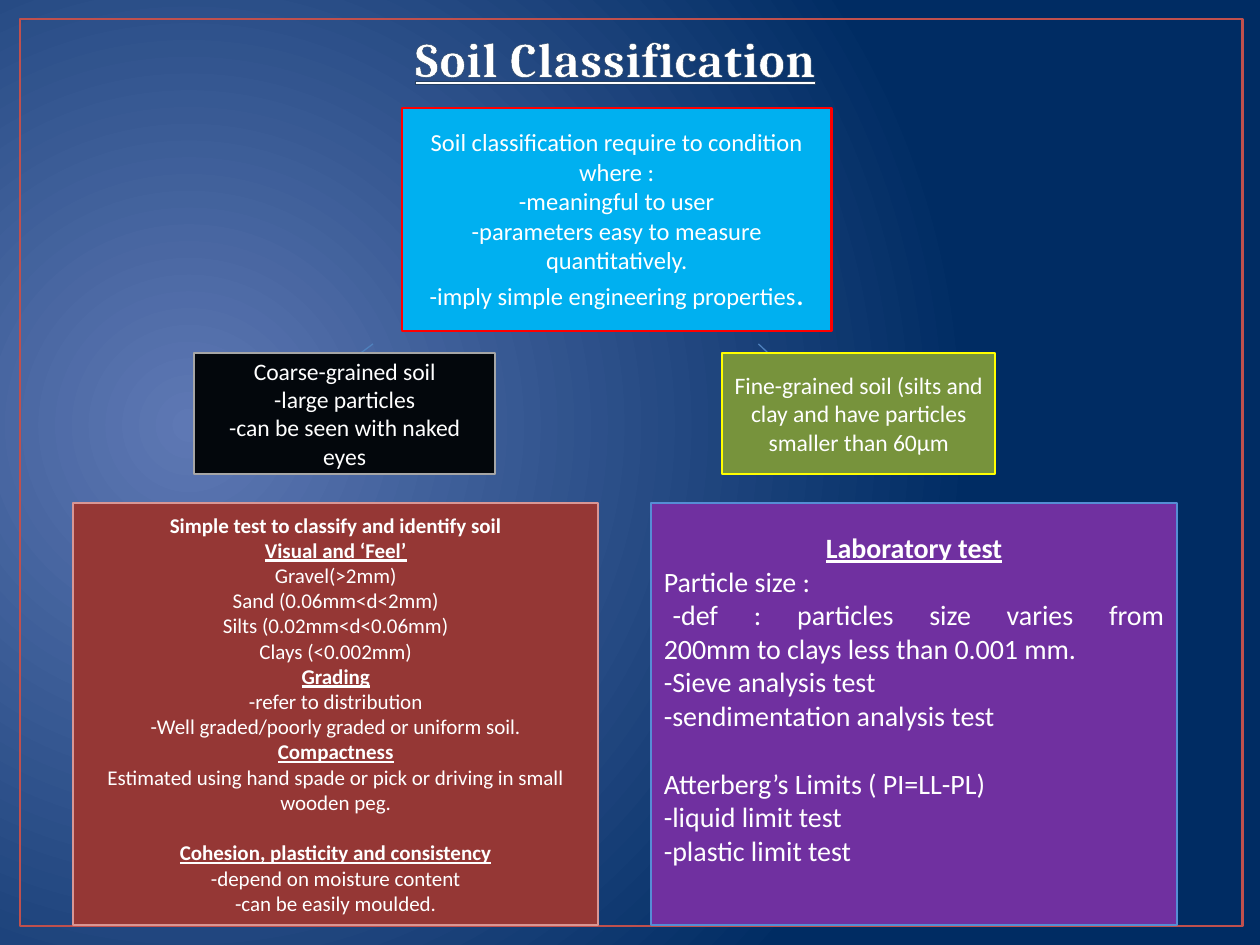
from dataclasses import dataclass

from lxml import etree
from pptx import Presentation
from pptx.dml.color import RGBColor
from pptx.enum.shapes import MSO_CONNECTOR as Connector, MSO_SHAPE as Shape
from pptx.enum.text import MSO_ANCHOR as Anchor, PP_ALIGN as Align
from pptx.oxml.ns import qn
from pptx.util import Inches, Pt


@dataclass(frozen=True)
class Theme:
    title_font: str = "Cambria"
    body_font: str = "Calibri"
    text: str = "FFFFFF"
    title_outline: str = "254061"
    glow: str = "5E78B4"
    navy: str = "002C63"
    frame: str = "C0504D"
    arrow: str = "4F81BD"
    # (fill, border) of each box
    condition: tuple = ("00B0F0", "FF0000")
    coarse: tuple = ("03070C", "A6A6A6")
    fine: tuple = ("77933C", "FFFF00")
    simple_tests: tuple = ("953735", "D99694")
    laboratory: tuple = ("7030A0", "558ED5")
    title_size: float = 28
    condition_size: float = 14
    stop_size: float = 18
    grain_size: float = 13.5
    simple_size: float = 12
    laboratory_size: float = 16
    border: float = 1.25


def rgb(value):
    return RGBColor.from_string(value)


def add_text(paragraph, text, *, size, color, font, bold=False, underline=False):
    run = paragraph.add_run()
    run.text = text
    run.font.size = Pt(size)
    run.font.name = font
    run.font.color.rgb = rgb(color)
    run.font.bold = bold
    run.font.underline = underline
    return run


class SlideBuilder:
    def __init__(self, slide, theme):
        self.slide = slide
        self.theme = theme

    def background(self):
        fill = self.slide.background.fill
        fill.gradient()
        for stop, color in zip(fill.gradient_stops, (self.theme.glow, self.theme.navy)):
            stop.color.rgb = rgb(color)
        gradient = next(self.slide.element.iter(qn("a:gradFill")))
        gradient.remove(gradient.find(qn("a:lin")))
        circle = etree.SubElement(gradient, qn("a:path"), path="circle")
        etree.SubElement(circle, qn("a:fillToRect"),
                         l="15000", t="50000", r="85000", b="60000")

    def rectangle(self, place, fill, border, width):
        shape = self.slide.shapes.add_shape(Shape.RECTANGLE, *map(Inches, place))
        shape.shadow.inherit = False
        if fill:
            shape.fill.solid()
            shape.fill.fore_color.rgb = rgb(fill)
        else:
            shape.fill.background()
        shape.line.color.rgb = rgb(border)
        shape.line.width = Pt(width)
        return shape

    def title(self, place, text):
        theme = self.theme
        frame = self.slide.shapes.add_textbox(*map(Inches, place)).text_frame
        frame.word_wrap = True
        frame.vertical_anchor = Anchor.BOTTOM
        paragraph = frame.paragraphs[0]
        paragraph.alignment = Align.CENTER
        run = add_text(paragraph, text, size=theme.title_size, color=theme.text,
                       font=theme.title_font, bold=True, underline=True)
        # Letter spacing and a thin outline
        properties = run.font._element if hasattr(run.font, "_element") else run._r.get_or_add_rPr()
        properties.set("spc", "50")
        outline = etree.Element(qn("a:ln"), w=str(Pt(1.05)))
        solid = etree.SubElement(outline, qn("a:solidFill"))
        etree.SubElement(solid, qn("a:srgbClr"), val=theme.title_outline)
        properties.insert(0, outline)

    def box(self, place, colors, lines, size, align=Align.CENTER):
        """Each line is a list of (text, format) runs."""
        theme = self.theme
        shape = self.rectangle(place, *colors, theme.border)
        frame = shape.text_frame
        frame.word_wrap = True
        frame.vertical_anchor = Anchor.MIDDLE
        for index, runs in enumerate(lines):
            paragraph = frame.add_paragraph() if index else frame.paragraphs[0]
            paragraph.alignment = align
            for text, style in runs:
                style = {"size": size, "color": theme.text, "font": theme.body_font, **style}
                add_text(paragraph, text, **style)
        return frame

    def arrow(self, start, end):
        arrow = self.slide.shapes.add_connector(
            Connector.STRAIGHT, *map(Inches, start + end))
        arrow.line.color.rgb = rgb(self.theme.arrow)
        arrow.line.width = Pt(0.75)
        etree.SubElement(arrow.line._get_or_add_ln(), qn("a:tailEnd"), type="triangle")
        etree.SubElement(arrow._element.spPr, qn("a:effectLst"))


def plain(*texts):
    return [[(text, {})] for text in texts]


def heading(text, underline=True):
    return [[(text, {"bold": True, "underline": underline})]]


def main():
    theme = Theme()
    presentation = Presentation()
    presentation.slide_width, presentation.slide_height = Inches(10), Inches(7.5)
    slide = presentation.slides.add_slide(presentation.slide_layouts[6])
    builder = SlideBuilder(slide, theme)

    # Backdrop, frame and title
    builder.background()
    builder.rectangle((0.16, 0.15, 9.7, 7.2), None, theme.frame, 1.5)
    builder.title((2.96, 0.25, 3.85, 0.49), "Soil Classification")

    # Conditions, branching to the two soil groups
    conditions = plain("Soil classification require to condition where :",
                       "-meaningful to user",
                       "-parameters easy to measure quantitatively.",
                       "-imply simple engineering properties")
    conditions[-1].append((".", {"size": theme.stop_size}))
    builder.box((3.19, 0.86, 3.41, 1.77), theme.condition, conditions, theme.condition_size)
    builder.arrow((2.96, 2.73), (2.54, 3.04))
    builder.arrow((6.02, 2.73), (6.35, 3.04))

    # Soil groups
    builder.box((1.54, 2.8, 2.39, 0.96), theme.coarse,
                plain("Coarse-grained soil", "-large particles", "-can be seen with naked eyes"),
                theme.grain_size)
    builder.box((5.73, 2.8, 2.17, 0.96), theme.fine,
                plain("Fine-grained soil (silts and clay and have particles smaller than 60µm"),
                theme.grain_size)

    # Simple tests
    simple_tests = (
        heading("Simple test to classify and identify soil", underline=False)
        + heading("Visual and ‘Feel’")
        + plain("Gravel(>2mm)", "Sand (0.06mm<d<2mm)", "Silts (0.02mm<d<0.06mm)",
                "Clays (<0.002mm)")
        + heading("Grading")
        + plain("-refer to distribution", "-Well graded/poorly graded or uniform soil.")
        + heading("Compactness")
        + plain("Estimated using hand spade or pick or driving in small wooden peg.")
        + heading("Cohesion, plasticity and consistency")
        + plain("-depend on moisture content", "-can be easily moulded."))
    frame = builder.box((0.58, 3.99, 4.17, 3.35), theme.simple_tests, simple_tests,
                        theme.simple_size)
    frame.paragraphs[-3].space_before = Pt(14.6)

    # Laboratory tests
    laboratory = heading("Laboratory test") + plain(
        "Particle size :",
        "-def : particles size varies from\v200mm to clays less than 0.001 mm.",
        "-Sieve analysis test", "-sendimentation analysis test",
        "Atterberg’s Limits ( PI=LL-PL)", "-liquid limit test", "-plastic limit test")
    frame = builder.box((5.17, 3.99, 4.17, 3.35), theme.laboratory, laboratory,
                        theme.laboratory_size, Align.JUSTIFY)
    frame.vertical_anchor = Anchor.TOP
    frame.margin_top = Inches(0.22)
    frame.paragraphs[0].alignment = Align.CENTER
    frame.paragraphs[2]._p.get_or_add_pPr().set("indent", str(Inches(0.07)))
    frame.paragraphs[-3].space_before = Pt(19.5)

    # A line break inside a run becomes a true break
    definition = frame.paragraphs[2]
    first, second = laboratory[2][0][0].split("\v")
    definition.runs[0].text = first
    definition.add_line_break()
    add_text(definition, second, size=theme.laboratory_size, color=theme.text,
             font=theme.body_font)

    presentation.save("out.pptx")


if __name__ == "__main__":
    main()
